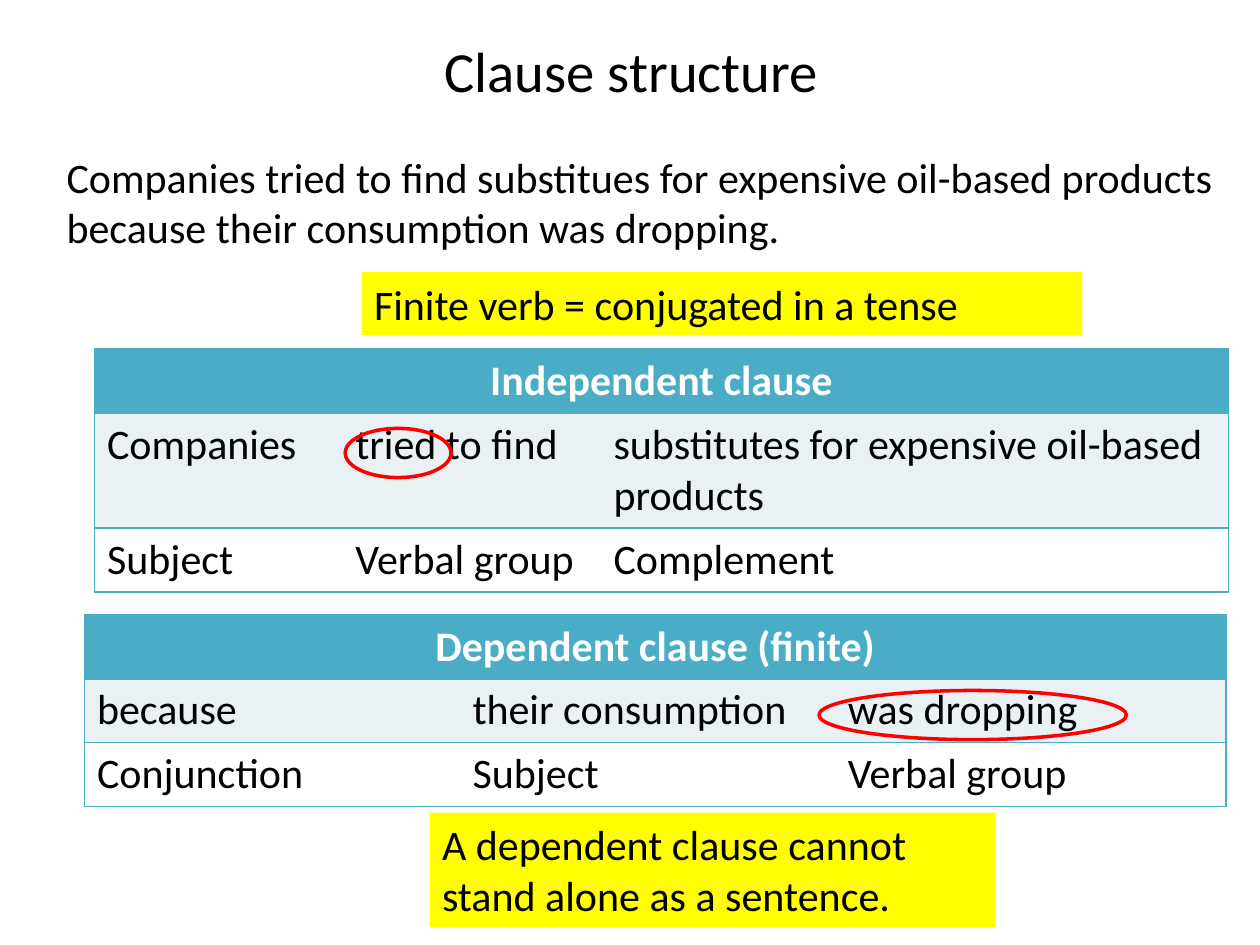
import pptx
import pptx.util
import pptx.dml.color
import pptx.enum.shapes
import pptx.enum.text
import pptx.oxml
import pptx.oxml.ns

Inches, Pt = pptx.util.Inches, pptx.util.Pt
Color = pptx.dml.color.RGBColor.from_string
Shape = pptx.enum.shapes.MSO_SHAPE
Align = pptx.enum.text.PP_ALIGN
Anchor = pptx.enum.text.MSO_ANCHOR

# Content: places are left, top, width, height in inches
TITLE = ("Clause structure", (0.51, 0.21, 9, 0.69))
SENTENCE = (
    ["Companies tried to find substitues for expensive oil-based products",
     "because their consumption was dropping."],
    (0.43, 1.15, 9.39, 0.91),
)
CLAUSES = [
    {"heading": "Independent clause",
     "rows": [["Companies", "tried to find", "substitutes for expensive oil-based products"],
              ["Subject", "Verbal group", "Complement"]],
     "corner": (0.75, 2.77), "widths": [1.97, 2.05, 4.98], "heights": [0.5, 0.9, 0.5]},
    {"heading": "Dependent clause (finite)",
     "rows": [["because", "their consumption", "was dropping"],
              ["Conjunction", "Subject", "Verbal group"]],
     "corner": (0.67, 4.88), "widths": [2.98, 2.98, 3.1], "heights": [0.5, 0.5, 0.5]},
]
NOTES = [
    ("Finite verb = conjugated in a tense", (2.87, 2.16, 5.72, 0.5)),
    ("A dependent clause cannot stand alone as a sentence.", (3.41, 6.45, 4.49, 0.91)),
]
VERB_RINGS = [(2.74, 3.4, 0.84, 0.39), (6.5, 5.48, 2.44, 0.39)]

THEME = {
    "font": "Calibri", "title": 32.4, "body": 24,
    "text": "000000", "white": "FFFFFF", "header": "4BACC6",
    "band": "E9F1F5", "note": "FFFF00", "ring": "FF0000",
}


def inches(place):
    return [Inches(value) for value in place]


def write(frame, lines, size="body", color="text", align=Align.LEFT, bold=False):
    for index, line in enumerate(lines):
        para = frame.paragraphs[0] if index == 0 else frame.add_paragraph()
        para.alignment = align
        span = para.add_run()
        span.text = line
        span.font.color.rgb = Color(THEME[color])
        formats = {"name": THEME["font"], "size": Pt(THEME[size]), "bold": bold}
        for name, value in formats.items():
            setattr(span.font, name, value)


def set_borders(cell, visible):
    """Draw the named sides (L, R, T, B) and hide the others."""
    properties = cell._tc.get_or_add_tcPr()
    for position, side in enumerate("LRTB"):
        paint = (f'<a:solidFill><a:srgbClr val="{THEME["header"]}"/></a:solidFill>'
                 if side in visible else "<a:noFill/>")
        line = pptx.oxml.parse_xml(
            f'<a:ln{side} {pptx.oxml.ns.nsdecls("a")} w="{Pt(1)}">{paint}</a:ln{side}>')
        properties.insert(position, line)


def add_clause(page, clause):
    widths, heights = clause["widths"], clause["heights"]
    place = (*clause["corner"], sum(widths), sum(heights))
    table = page.shapes.add_table(len(heights), len(widths), *inches(place)).table
    for column, width in zip(table.columns, widths):
        column.width = Inches(width)
    for row, height in zip(table.rows, heights):
        row.height = Inches(height)

    # Header across all columns, then words and their functions
    last = len(widths) - 1
    header = table.cell(0, 0)
    header.merge(table.cell(0, last))
    header.vertical_anchor = Anchor.MIDDLE
    write(header.text_frame, [clause["heading"]], color="white", align=Align.CENTER, bold=True)
    for row, words in enumerate(clause["rows"], start=1):
        for column, word in enumerate(words):
            write(table.cell(row, column).text_frame, [word])

    for row, fill in enumerate(["header", "band", "white"]):
        for column in range(len(widths)):
            cell = table.cell(row, column)
            cell.fill.solid()
            cell.fill.fore_color.rgb = Color(THEME[fill])
            sides = "TB" + ("L" if column == 0 else "") + ("R" if column == last else "")
            set_borders(cell, "LRTB" if row == 0 else sides)


def add_ring(page, place):
    ring = page.shapes.add_shape(Shape.OVAL, *inches(place))
    ring.shadow.inherit = False
    ring.fill.background()
    ring.line.color.rgb = Color(THEME["ring"])
    ring.line.width = Pt(2)


def add_note(page, text, place):
    note = page.shapes.add_shape(Shape.RECTANGLE, *inches(place))
    note.shadow.inherit = False
    note.fill.solid()
    note.fill.fore_color.rgb = Color(THEME["note"])
    note.line.fill.background()
    note.text_frame.word_wrap = True
    note.text_frame.vertical_anchor = Anchor.TOP
    write(note.text_frame, [text])


def main():
    deck = pptx.Presentation()
    deck.slide_width, deck.slide_height = Inches(10), Inches(7.5)
    page = deck.slides.add_slide(deck.slide_layouts[5])

    # Title
    text, place = TITLE
    title = page.shapes.title
    for name, value in zip(("left", "top", "width", "height"), inches(place)):
        setattr(title, name, value)
    title.text_frame.vertical_anchor = Anchor.MIDDLE
    write(title.text_frame, [text], size="title", align=Align.CENTER)

    # Clause tables, with their finite verbs ringed
    for clause in CLAUSES:
        add_clause(page, clause)
    for place in VERB_RINGS:
        add_ring(page, place)

    # Yellow notes and the example sentence
    for text, place in NOTES:
        add_note(page, text, place)
    lines, place = SENTENCE
    box = page.shapes.add_textbox(*inches(place))
    box.text_frame.word_wrap = False
    write(box.text_frame, lines)

    deck.save("out.pptx")


if __name__ == "__main__":
    main()
